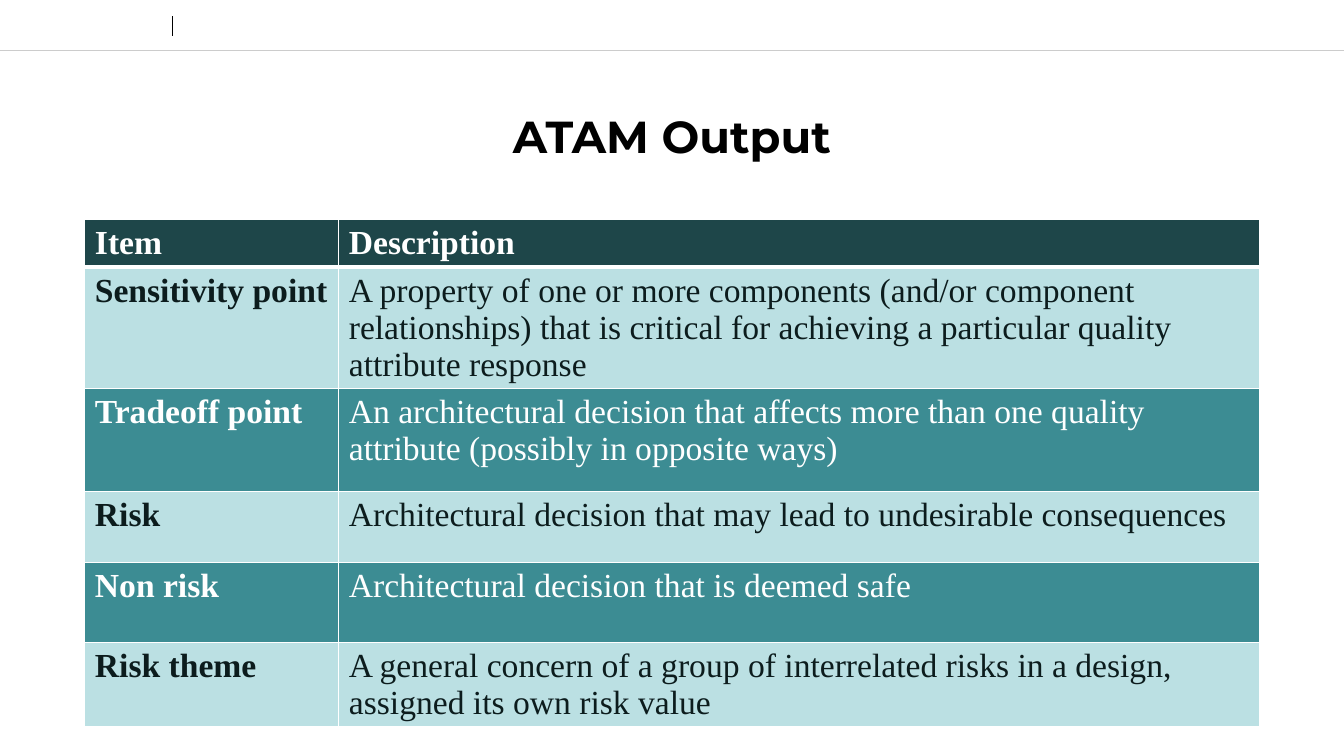
from lxml import etree
from pptx import Presentation
from pptx.dml.color import RGBColor
from pptx.enum.shapes import MSO_CONNECTOR
from pptx.enum.text import MSO_ANCHOR, PP_ALIGN
from pptx.oxml import parse_xml
from pptx.oxml.ns import nsdecls, qn
from pptx.util import Pt

STRAIGHT = MSO_CONNECTOR.STRAIGHT
CENTER = PP_ALIGN.CENTER
MIDDLE = MSO_ANCHOR.MIDDLE

W, H = 960, 540
COLORS = {"white": "FFFFFF", "black": "000000", "rule": "CCCCCC", "header": "1E4649",
          "light": "BBE0E3", "dark": "3C8C93", "ink": "0C1C1D"}
TITLE_FONT, TABLE_FONT = "Montserrat", "Times New Roman"

COL_WIDTHS = [181.4, 657.4]
# Row height, item, description
ROWS = [
    (29.5, "Item", "Description"),
    (78.5, "Sensitivity point",
     "A property of one or more components (and/or component relationships) "
     "that is critical for achieving a particular quality attribute response"),
    (73.4, "Tradeoff point",
     "An architectural decision that affects more than one quality attribute "
     "(possibly in opposite ways)"),
    (51.1, "Risk", "Architectural decision that may lead to undesirable consequences"),
    (56.9, "Non risk", "Architectural decision that is deemed safe"),
    (29.5, "Risk theme",
     "A general concern of a group of interrelated risks in a design, "
     "assigned its own risk value"),
]


def rgb(name):
    return RGBColor.from_string(COLORS[name])


def set_font(p, name, size, color, bold):
    p.font.name, p.font.size, p.font.bold = name, Pt(size), bold
    p.font.color.rgb = rgb(color)


def add_line(s, x1, y1, x2, y2, color, width):
    line = s.shapes.add_connector(STRAIGHT, Pt(x1), Pt(y1), Pt(x2), Pt(y2))
    line.line.color.rgb = rgb(color)
    line.line.width = Pt(width)
    etree.SubElement(line._element.spPr, qn("a:effectLst"))


def add_header_rules(s, x, y, w, h):
    add_line(s, x, y + h, x + w, y + h, "rule", 0.25)
    add_line(s, x + 123, y + 11.5, x + 123, y + 26, "black", 0.5)


def add_title(s, x, y, w, h, text):
    sp = s.shapes.title
    sp.left, sp.top, sp.width, sp.height = Pt(x), Pt(y), Pt(w), Pt(h)
    tf = sp.text_frame
    tf.text = text
    tf.word_wrap = True
    tf.vertical_anchor = MIDDLE
    p = tf.paragraphs[0]
    p.alignment = CENTER
    set_font(p, TITLE_FONT, 32, "black", True)


def set_borders(cell, bottom_width):
    tcPr = cell._tc.get_or_add_tcPr()
    for side, width in (("L", 1), ("R", 1), ("T", 1), ("B", bottom_width)):
        tcPr.append(parse_xml(
            f'<a:ln{side} {nsdecls("a")} w="{Pt(width)}"><a:solidFill>'
            f'<a:srgbClr val="{COLORS["white"]}"/></a:solidFill></a:ln{side}>'))


def add_output_table(s, x, y, w, h):
    table = s.shapes.add_table(len(ROWS), len(COL_WIDTHS), Pt(x), Pt(y), Pt(w), Pt(h)).table
    for col, width in zip(table.columns, COL_WIDTHS):
        col.width = Pt(width)
    for i, (height, *texts) in enumerate(ROWS):
        table.rows[i].height = Pt(height)
        # Header row, then alternating light and dark bands
        fill = "header" if i == 0 else "light" if i % 2 else "dark"
        color = "ink" if fill == "light" else "white"
        for j, text in enumerate(texts):
            cell = table.cell(i, j)
            set_borders(cell, 3 if i == 0 else 1)
            cell.fill.solid()
            cell.fill.fore_color.rgb = rgb(fill)
            cell.text = text
            set_font(cell.text_frame.paragraphs[0], TABLE_FONT, 24, color, i == 0 or j == 0)


def main():
    prs = Presentation()
    prs.slide_width, prs.slide_height = Pt(W), Pt(H)
    s = prs.slides.add_slide(prs.slide_layouts[5])
    add_header_rules(s, 0, 0, W, 36)
    add_title(s, 0, 66.5, W, 60, "ATAM Output")
    add_output_table(s, 60.6, 157, sum(COL_WIDTHS), sum(row[0] for row in ROWS))
    prs.save("out.pptx")


if __name__ == "__main__":
    main()
